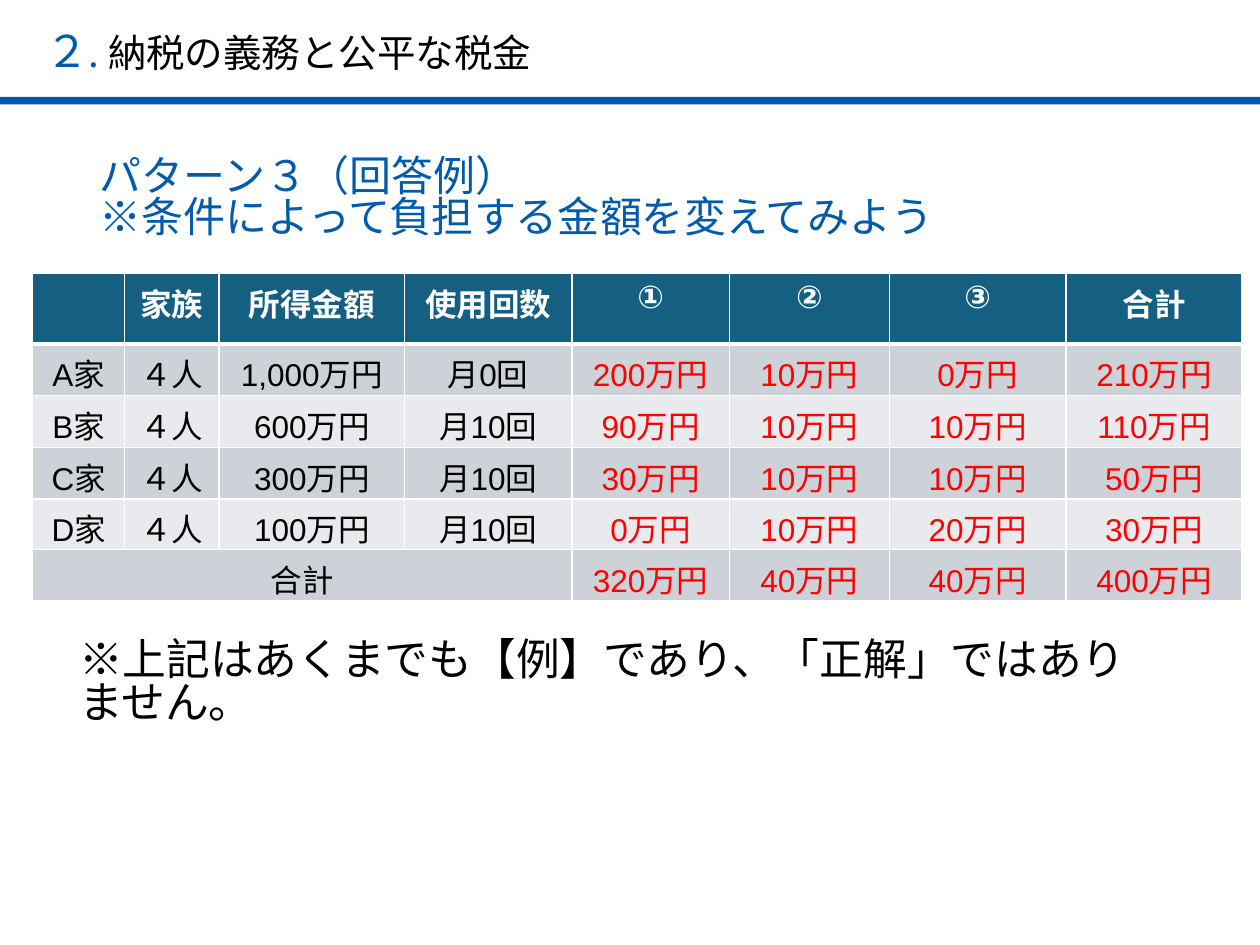
from pptx import Presentation
from pptx.dml.color import RGBColor
from pptx.enum.shapes import MSO_SHAPE
from pptx.enum.text import MSO_ANCHOR, PP_ALIGN
from pptx.oxml.ns import qn
from pptx.util import Inches, Pt
from lxml import etree

BLUE = RGBColor(0x00, 0x5B, 0xAD)
TEAL = RGBColor(0x15, 0x60, 0x82)
DARK_BAND = RGBColor(0xCC, 0xD2, 0xD8)
LIGHT_BAND = RGBColor(0xE8, 0xEA, 0xED)
BLACK = RGBColor(0x00, 0x00, 0x00)
WHITE = RGBColor(0xFF, 0xFF, 0xFF)
RED = RGBColor(0xFF, 0x00, 0x00)
JAPANESE_FONT = "Noto Sans CJK JP"


def add_text(paragraph, text, size=18, color=BLACK, font=JAPANESE_FONT,
             bold=False, align=PP_ALIGN.LEFT, spacing=None):
    paragraph.alignment = align
    if spacing:
        paragraph.line_spacing = spacing
    run = paragraph.add_run()
    run.text = text
    run.font.size = Pt(size)
    run.font.bold = bold
    run.font.color.rgb = color
    run.font.name = font
    east_asian = etree.SubElement(run.font._element, qn("a:ea"))
    east_asian.set("typeface", JAPANESE_FONT)


def add_border(cell, side, width):
    line = etree.SubElement(cell._tc.get_or_add_tcPr(), qn(f"a:ln{side}"))
    line.set("w", str(Pt(width)))
    fill = etree.SubElement(line, qn("a:solidFill"))
    etree.SubElement(fill, qn("a:srgbClr")).set("val", str(WHITE))


presentation = Presentation()
presentation.slide_width = Inches(10)
presentation.slide_height = Inches(7.5)
slide = presentation.slides.add_slide(presentation.slide_layouts[6])

# Rule under the title
rule = slide.shapes.add_shape(MSO_SHAPE.RECTANGLE, Inches(0), Inches(0.77),
                              Inches(10), Inches(0.06))
rule.shadow.inherit = False
rule.fill.solid()
rule.fill.fore_color.rgb = BLUE
rule.line.fill.background()

# Text boxes: title, closing note, heading
frames = []
for left, top, width, height in [(0.26, 0.15, 9.59, 0.5),
                                 (0.53, 4.93, 8.73, 1),
                                 (0.69, 1, 8.4, 1.17)]:
    box = slide.shapes.add_textbox(Inches(left), Inches(top),
                                   Inches(width), Inches(height))
    box.text_frame.word_wrap = True
    box.text_frame.vertical_anchor = MSO_ANCHOR.MIDDLE
    frames.append(box.text_frame)
title, note, heading = frames

add_text(title.paragraphs[0], "２", size=25, color=BLUE)
add_text(title.paragraphs[0], ". ", size=22, color=BLUE)
add_text(title.paragraphs[0], "納税の義務と公平な税金", size=22)

add_text(note.paragraphs[0],
         "※上記はあくまでも【例】であり、「正解」ではありません。",
         size=25, spacing=0.82)

add_text(heading.paragraphs[0], "パターン３（回答例）",
         size=24, color=BLUE, spacing=0.82)
add_text(heading.add_paragraph(), "※条件によって負担する金額を変えてみよう",
         size=24, color=BLUE, spacing=0.82)

# Table of each family's share
ROWS = [
    ["", "家族", "所得金額", "使用回数", "①", "②", "③", "合計"],
    ["A家", "４人", "1,000万円", "月0回", "200万円", "10万円", "0万円", "210万円"],
    ["B家", "４人", "600万円", "月10回", "90万円", "10万円", "10万円", "110万円"],
    ["C家", "４人", "300万円", "月10回", "30万円", "10万円", "10万円", "50万円"],
    ["D家", "４人", "100万円", "月10回", "0万円", "10万円", "20万円", "30万円"],
    ["合計", "", "", "", "320万円", "40万円", "40万円", "400万円"],
]
COLUMN_WIDTHS = [0.73, 0.75, 1.47, 1.33, 1.25, 1.27, 1.4, 1.4]
ROW_HEIGHTS = [0.56, 0.41, 0.41, 0.41, 0.37, 0.41]
FIRST_ANSWER_COLUMN = 4

table = slide.shapes.add_table(len(ROWS), len(COLUMN_WIDTHS), Inches(0.26),
                               Inches(2.17), Inches(9.59), Inches(2.58)).table
for column, width in zip(table.columns, COLUMN_WIDTHS):
    column.width = Inches(width)
for row, height in zip(table.rows, ROW_HEIGHTS):
    row.height = Inches(height)

for row_index, values in enumerate(ROWS):
    is_header = row_index == 0
    band = DARK_BAND if row_index % 2 else LIGHT_BAND
    for column_index, value in enumerate(values):
        cell = table.cell(row_index, column_index)
        for side in "LRTB":
            # The line between header and body is thicker
            thick = (row_index, side) in [(0, "B"), (1, "T")]
            add_border(cell, side, 3 if thick else 1)
        cell.fill.solid()
        cell.fill.fore_color.rgb = TEAL if is_header else band
        if is_header:
            color = WHITE
        else:
            color = RED if column_index >= FIRST_ANSWER_COLUMN else BLACK
        if value:
            add_text(cell.text_frame.paragraphs[0], value, color=color,
                     font="Arial", bold=is_header, align=PP_ALIGN.CENTER)

# Total label spans the condition columns
table.cell(5, 0).merge(table.cell(5, FIRST_ANSWER_COLUMN - 1))

presentation.save("out.pptx")
